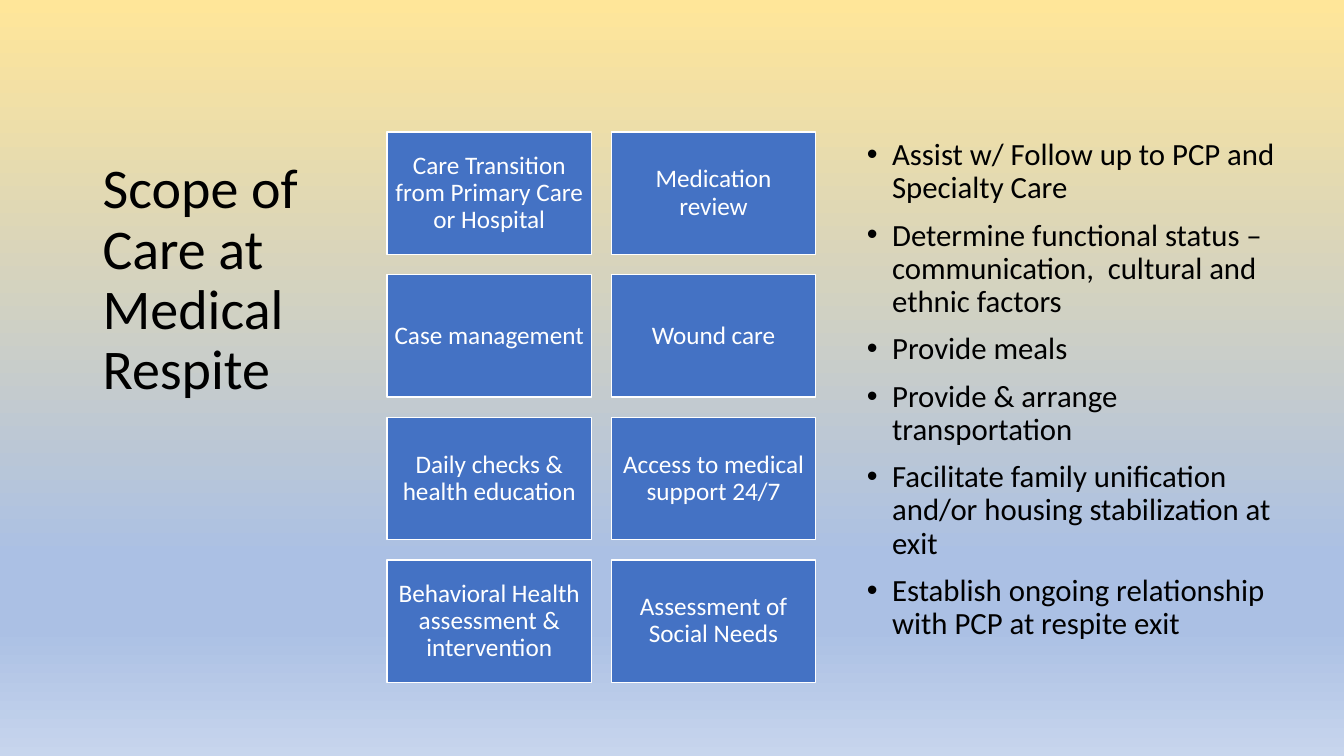
from lxml.etree import SubElement
from pptx import Presentation
from pptx.dml.color import RGBColor
from pptx.enum.shapes import MSO_SHAPE as Shape
from pptx.enum.text import MSO_ANCHOR as Anchor, PP_ALIGN as Align
from pptx.oxml.ns import qn
from pptx.util import Inches, Pt

BLACK = RGBColor(0x00, 0x00, 0x00)
WHITE = RGBColor(0xFF, 0xFF, 0xFF)
BLUE = RGBColor(0x44, 0x72, 0xC4)
SAND = RGBColor(0xFF, 0xE6, 0x99)
SKY = RGBColor(0xAB, 0xC0, 0xE4)
PALE_SKY = RGBColor(0xC7, 0xD5, 0xED)
BACKGROUND_STOPS = [(0, SAND), (74, SKY), (83, SKY), (100, PALE_SKY)]

FONT = "Calibri"
SLIDE_SIZE = (13.33, 7.5)

# Regions: left, top, width, height in inches
TITLE_BOX = (0.92, 1.54, 3.17, 4.77)
CARDS_BOX = (3.84, 1.31, 4.25, 5.46)
BULLETS_BOX = (8.5, 1.33, 4.39, 5.45)
CARD_COLUMNS = 2
CARD_GAP = 0.2

TITLE = "Scope of Care at Medical Respite"
SERVICES = [
    "Care Transition from Primary Care or Hospital",
    "Medication review",
    "Case management",
    "Wound care",
    "Daily checks & health education",
    "Access to medical support 24/7",
    "Behavioral Health assessment & intervention",
    "Assessment of Social Needs",
]
TASKS = [
    "Assist w/ Follow up to PCP and Specialty Care",
    "Determine functional status – communication,  cultural and ethnic factors",
    "Provide meals",
    "Provide & arrange transportation",
    "Facilitate family unification and/or housing stabilization at exit",
    "Establish ongoing relationship with PCP at respite exit",
]


def add_bullet(paragraph, indent):
    properties = paragraph._p.get_or_add_pPr()
    properties.set("marL", str(Inches(indent)))
    properties.set("indent", str(-Inches(indent)))
    SubElement(properties, qn("a:buFont"), typeface="Arial")
    SubElement(properties, qn("a:buChar"), char="•")


def write_text(shape, lines, size, color=BLACK, align=Align.LEFT,
               anchor=Anchor.TOP, margin=None, bullet_indent=None, gap=0):
    frame = shape.text_frame
    frame.word_wrap = True
    frame.vertical_anchor = anchor
    if margin is not None:
        frame.margin_left = frame.margin_right = Inches(margin)
        frame.margin_top = frame.margin_bottom = Inches(margin)
    for index, line in enumerate(lines):
        paragraph = frame.add_paragraph() if index else frame.paragraphs[0]
        if bullet_indent:
            add_bullet(paragraph, bullet_indent)
        paragraph.alignment = align
        paragraph.line_spacing = 0.9
        paragraph.space_before = Pt(gap if index else 0)
        run = paragraph.add_run()
        run.text = line
        run.font.name = FONT
        run.font.size = Pt(size)
        run.font.color.rgb = color


def paint_background(slide):
    fill = slide.background.fill
    fill.gradient()
    fill.gradient_angle = 270
    stops = slide.element.find(".//" + qn("a:gsLst"))
    for stop in list(stops):
        stops.remove(stop)
    for percent, color in BACKGROUND_STOPS:
        stop = SubElement(stops, qn("a:gs"), pos=str(percent * 1000))
        SubElement(stop, qn("a:srgbClr"), val=str(color))


def add_title(slide, box):
    shape = slide.shapes.add_textbox(*map(Inches, box))
    write_text(shape, [TITLE], size=40)


def add_service_cards(slide, box):
    left, top, width, height = box
    rows = len(SERVICES) // CARD_COLUMNS
    card_width = (width - CARD_GAP * (CARD_COLUMNS - 1)) / CARD_COLUMNS
    card_height = (height - CARD_GAP * (rows - 1)) / rows
    for index, service in enumerate(SERVICES):
        row, column = divmod(index, CARD_COLUMNS)
        card = slide.shapes.add_shape(
            Shape.RECTANGLE,
            Inches(left + column * (card_width + CARD_GAP)),
            Inches(top + row * (card_height + CARD_GAP)),
            Inches(card_width), Inches(card_height))
        card.shadow.inherit = False
        card.fill.solid()
        card.fill.fore_color.rgb = BLUE
        card.line.color.rgb = WHITE
        card.line.width = Pt(1)
        write_text(card, [service], size=18, color=WHITE, align=Align.CENTER,
                   anchor=Anchor.MIDDLE, margin=0.07)


def add_task_bullets(slide, box):
    shape = slide.shapes.add_textbox(*map(Inches, box))
    write_text(shape, TASKS, size=22, bullet_indent=0.25, gap=10)


def main():
    presentation = Presentation()
    presentation.slide_width, presentation.slide_height = map(Inches, SLIDE_SIZE)
    slide = presentation.slides.add_slide(presentation.slide_layouts[6])
    paint_background(slide)
    add_title(slide, TITLE_BOX)
    add_service_cards(slide, CARDS_BOX)
    add_task_bullets(slide, BULLETS_BOX)
    presentation.save("out.pptx")


if __name__ == "__main__":
    main()
